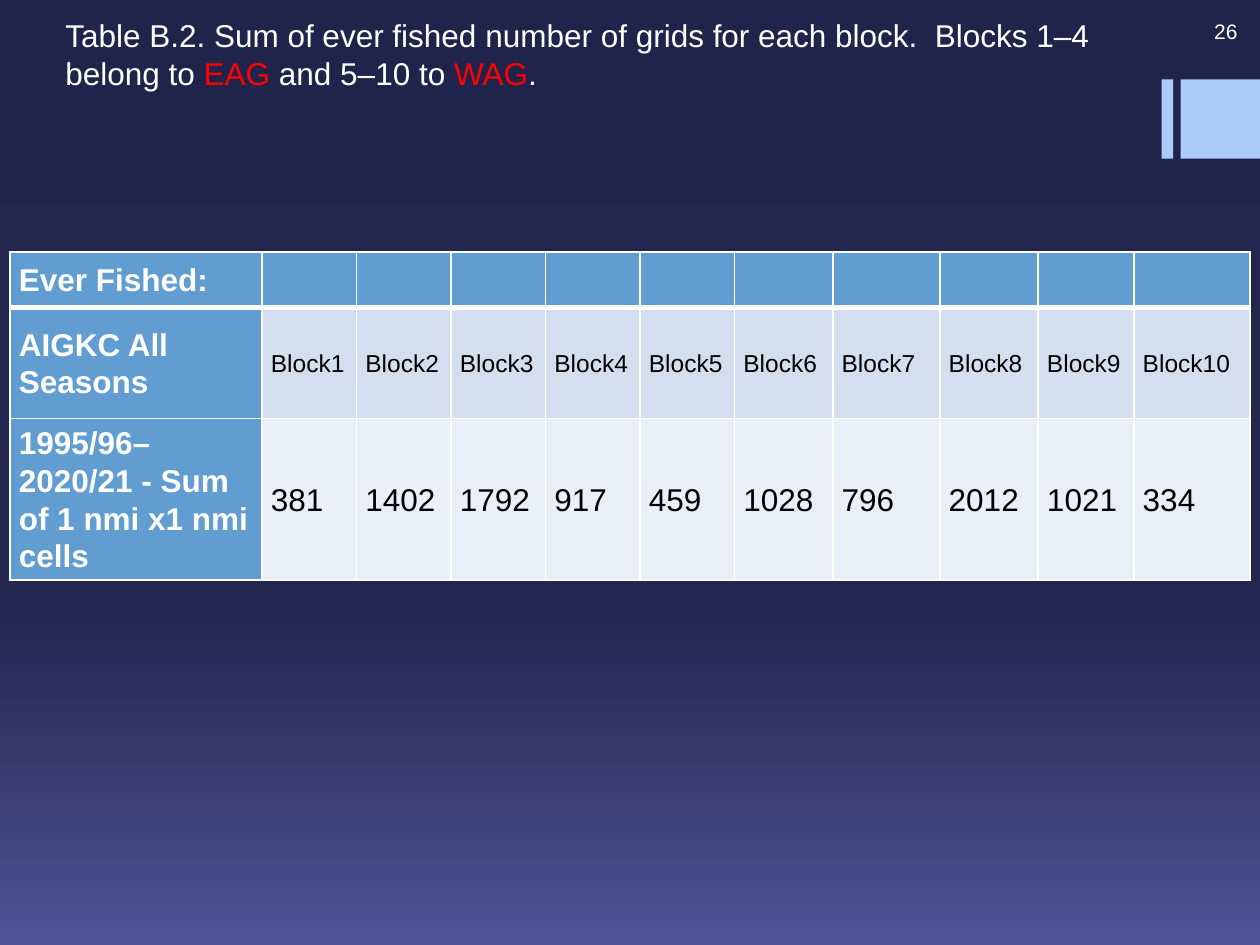
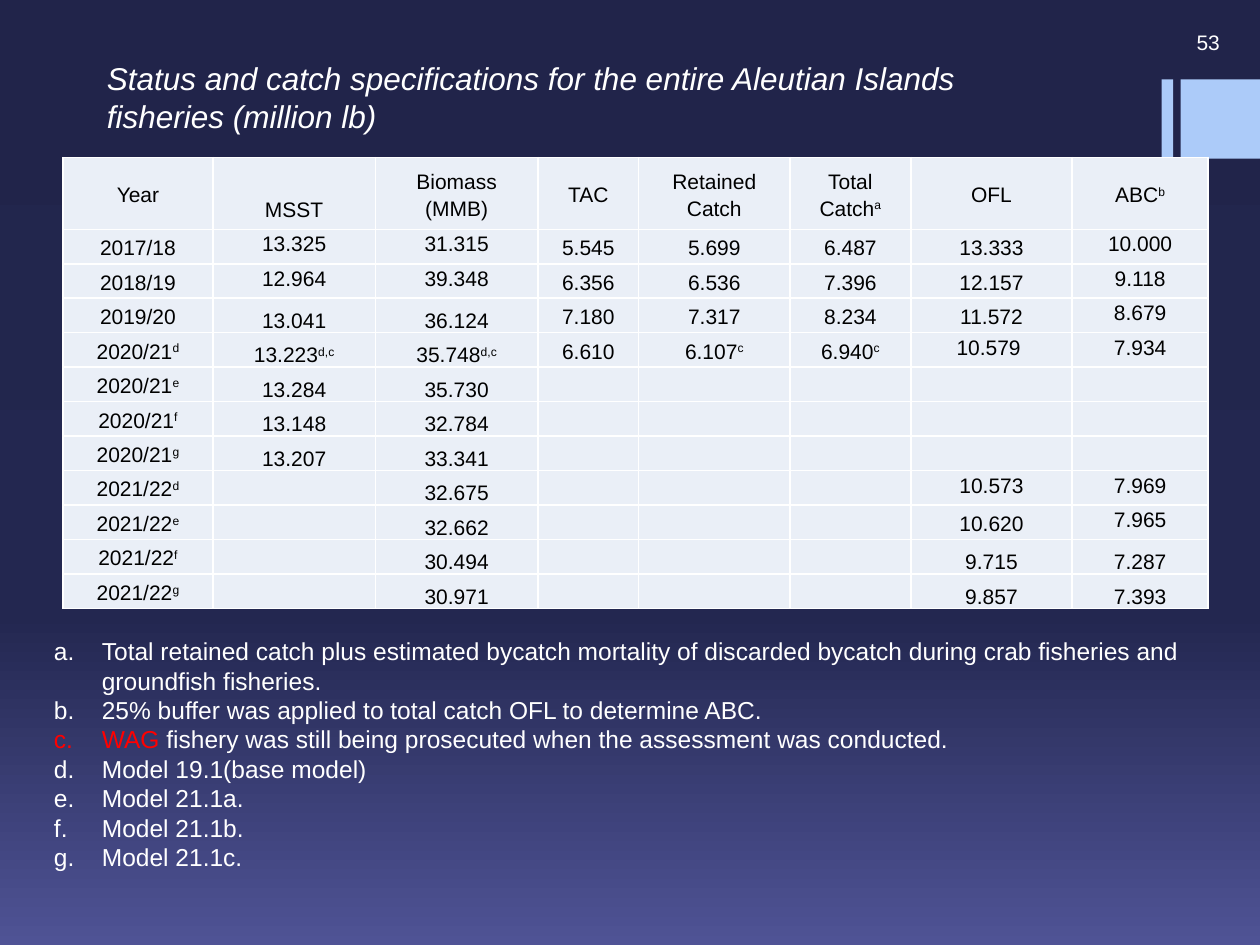
from copy import deepcopy

from lxml import etree
from pptx import Presentation
from pptx import util as u
from pptx.dml.color import RGBColor
from pptx.enum import shapes, text
from pptx.oxml.ns import qn

WHITE = RGBColor(0xFF, 0xFF, 0xFF)
BLACK = RGBColor(0, 0, 0)
RED = RGBColor(0xFF, 0, 0)
BAND_BLUE = RGBColor(0xAC, 0xCB, 0xF9)
HEADER_BLUE = RGBColor(0x62, 0x9D, 0xD1)
ROW_BLUE = RGBColor(0xD3, 0xDF, 0xEE)
ROW_PALE = RGBColor(0xEA, 0xEF, 0xF7)
BACKGROUND_STOPS = [
    (0, RGBColor(0x21, 0x24, 0x4A)),
    (0.65, RGBColor(0x23, 0x27, 0x50)),
    (1, RGBColor(0x4F, 0x53, 0x95)),
]
FONT = "Arial"
ANCHORS = {
    "t": text.MSO_ANCHOR.TOP,
    "m": text.MSO_ANCHOR.MIDDLE,
    "b": text.MSO_ANCHOR.BOTTOM,
}

BLOCK_COLUMNS = [2] + [0.75] * 5 + [0.78, 0.85, 0.78, 0.76, 0.92]
BLOCK_ROWS = [0.44, 0.88, 1.26]
BLOCK_CELLS = [
    ["Ever Fished:"] + [""] * 10,
    ["AIGKC All Seasons"] + [f"Block{number}" for number in range(1, 11)],
    ["1995/96–2020/21 - Sum of 1 nmi x1 nmi cells"]
    + "381 1402 1792 917 459 1028 796 2012 1021 334".split(),
]

CATCH_COLUMNS = [1.19, 1.29, 1.29, 0.8, 1.2, 0.96, 1.28, 1.08]
CATCH_HEADER_HEIGHT = 0.57
CATCH_TABLE_HEIGHT = 3.58
CATCH_CELLS = [
    ("mbmmmmmm", "Year|MSST|Biomass (MMB)|TAC|Retained Catch|Total Catch^a|OFL|ABC^b"),
    ("mttmmmmt", "2017/18|13.325|31.315|5.545|5.699|6.487|13.333|10.000"),
    ("mttmmmmt", "2018/19|12.964|39.348|6.356|6.536|7.396|12.157|9.118"),
    ("mbbmmmmt", "2019/20|13.041|36.124|7.180|7.317|8.234|11.572|8.679"),
    ("mbbmmmtt", "2020/21^d|13.223^d,c|35.748^d,c|6.610|6.107^c|6.940^c|10.579 |7.934"),
    ("mbbmmmmm", "2020/21^e|13.284|35.730|||||"),
    ("mbbmmmmm", "2020/21^f|13.148|32.784|||||"),
    ("mbbmmmmm", "2020/21^g|13.207|33.341|||||"),
    ("mmbmmmtt", "2021/22^d||32.675||||10.573|7.969"),
    ("mmbmmmmt", "2021/22^e||32.662||||10.620|7.965"),
    ("mmbmmmbb", "2021/22^f||30.494||||9.715|7.287"),
    ("mmbmmmbb", "2021/22^g||30.971||||9.857|7.393"),
]
NOTES = [
    [("Total retained catch plus estimated bycatch mortality of discarded bycatch "
      "during crab fisheries and groundfish fisheries.", WHITE)],
    [("25% buffer was applied to total catch OFL to determine ABC.", WHITE)],
    [("WAG", RED),
     (" fishery was still being prosecuted when the assessment was conducted.", WHITE)],
    [("Model 19.1(base model)", WHITE)],
    [("Model 21.1a.", WHITE)],
    [("Model 21.1b.", WHITE)],
    [("Model 21.1c.", WHITE)],
]


def set_background(master):
    """Give every slide the dark to violet vertical gradient."""
    fill = master.background.fill
    fill.gradient()
    fill.gradient_angle = 270
    stop_list = master.element.find(".//" + qn("a:gsLst"))
    stop_list.insert(1, deepcopy(stop_list[0]))
    for stop, (position, color) in zip(fill.gradient_stops, BACKGROUND_STOPS):
        stop.color.rgb = color
        stop.position = position


def add_run(paragraph, words, size, color, bold=False, italic=False, raised=False):
    """Append one formatted run, raised when it is a note mark."""
    run = paragraph.add_run()
    run.text = words
    font = run.font
    font.name, font.size, font.color.rgb = FONT, u.Pt(size), color
    font.bold, font.italic = bold, italic
    if raised:
        font._element.set("baseline", "30000")


def add_text_box(slide, left, top, width, height):
    """Add an empty wrapping text box and return its frame."""
    box = slide.shapes.add_textbox(*map(u.Inches, (left, top, width, height)))
    box.text_frame.word_wrap = True
    return box.text_frame


def add_band(slide, left, width):
    """Add one block of the band at the right edge."""
    band = slide.shapes.add_shape(
        shapes.MSO_SHAPE.RECTANGLE, *map(u.Inches, (left, 0.63, width, 0.63)))
    band.shadow.inherit = False
    band.fill.solid()
    band.fill.fore_color.rgb = BAND_BLUE
    band.line.fill.background()


def add_base_slide(presentation, number, left, top):
    """Add a slide with the edge band and its page number."""
    slide = presentation.slides.add_slide(presentation.slide_layouts[6])
    add_band(slide, 9.22, 0.09)
    add_band(slide, 9.37, 0.63)
    frame = add_text_box(slide, left, top, 1.03, 0.33)
    frame.vertical_anchor = text.MSO_ANCHOR.MIDDLE
    paragraph = frame.paragraphs[0]
    paragraph.alignment = text.PP_ALIGN.RIGHT
    add_run(paragraph, number, 12, WHITE)
    return slide


def add_title(slide, left, top, width, height, parts, italic=False):
    """Add the slide title from pairs of words and colour."""
    paragraph = add_text_box(slide, left, top, width, height).paragraphs[0]
    for words, color in parts:
        add_run(paragraph, words, 18, color, italic=italic)


def add_table(slide, left, top, columns, rows):
    """Add an unstyled table with the given column widths and row heights."""
    table = slide.shapes.add_table(
        len(rows), len(columns), u.Inches(left), u.Inches(top),
        u.Inches(sum(columns)), u.Inches(sum(rows))).table
    table.first_row = table.horz_banding = False
    for column, width in zip(table.columns, columns):
        column.width = u.Inches(width)
    for row, height in zip(table.rows, rows):
        row.height = u.Inches(height)
    return table


def set_borders(cell, top=1, bottom=1):
    """Draw white lines of the given point widths around a cell."""
    properties = cell._tc.get_or_add_tcPr()
    for side, width in (("L", 1), ("R", 1), ("T", top), ("B", bottom)):
        line = etree.SubElement(properties, qn(f"a:ln{side}"), w=str(u.Pt(width)))
        fill = etree.SubElement(line, qn("a:solidFill"))
        etree.SubElement(fill, qn("a:srgbClr"), val=str(WHITE))


def fill_cell(cell, words, fill, size, color, spacing, bold=False, anchor="m",
              alignment=text.PP_ALIGN.LEFT):
    """Fill one cell; words after a caret are raised as a note mark."""
    cell.fill.solid()
    cell.fill.fore_color.rgb = fill
    cell.margin_left = cell.margin_right = u.Inches(0.07)
    cell.margin_top = cell.margin_bottom = 0
    cell.vertical_anchor = ANCHORS[anchor]
    paragraph = cell.text_frame.paragraphs[0]
    paragraph.alignment, paragraph.line_spacing = alignment, spacing
    body, _, mark = words.partition("^")
    if body:
        add_run(paragraph, body, size, color, bold)
    else:
        etree.SubElement(paragraph._p, qn("a:endParaRPr"), sz=str(size * 100))
    if mark:
        add_run(paragraph, mark, size, color, bold, raised=True)


def add_block_table(slide):
    """Add the table of fished cells for each block."""
    table = add_table(slide, 0.08, 2, BLOCK_COLUMNS, BLOCK_ROWS)
    body_styles = [(HEADER_BLUE, 18), (ROW_BLUE, 14), (ROW_PALE, 18)]
    for row, (values, (row_fill, row_size)) in enumerate(zip(BLOCK_CELLS, body_styles)):
        for column, words in enumerate(values):
            cell = table.cell(row, column)
            set_borders(cell, 3 if row == 1 else 1, 3 if row == 0 else 1)
            if column == 0:
                fill_cell(cell, words, HEADER_BLUE, 18, WHITE, 1.07, bold=True)
            else:
                fill_cell(cell, words, row_fill, row_size, BLACK, 1.07)


def add_catch_table(slide):
    """Add the table of status and catch by year."""
    year_count = len(CATCH_CELLS) - 1
    year_height = (CATCH_TABLE_HEIGHT - CATCH_HEADER_HEIGHT) / year_count
    rows = [CATCH_HEADER_HEIGHT] + [year_height] * year_count
    table = add_table(slide, 0.5, 1.25, CATCH_COLUMNS, rows)
    for row, (anchors, line) in enumerate(CATCH_CELLS):
        for column, (anchor, words) in enumerate(zip(anchors, line.split("|"))):
            cell = table.cell(row, column)
            set_borders(cell)
            fill_cell(cell, words, ROW_PALE, 12, BLACK, 1.15, anchor=anchor,
                      alignment=text.PP_ALIGN.CENTER)
    table.cell(0, 1).margin_bottom = u.Inches(0.06)


def add_notes_list(slide):
    """Add the lettered list of table notes."""
    frame = add_text_box(slide, 0.33, 5, 9.45, 2.22)
    indent = u.Inches(0.38)
    for index, parts in enumerate(NOTES):
        paragraph = frame.add_paragraph() if index else frame.paragraphs[0]
        properties = paragraph._p.get_or_add_pPr()
        properties.set("marL", str(indent))
        properties.set("indent", str(-indent))
        etree.SubElement(properties, qn("a:buFont"), typeface="+mj-lt")
        etree.SubElement(properties, qn("a:buAutoNum"), type="alphaLcPeriod")
        for words, color in parts:
            add_run(paragraph, words, 14, color)


def main():
    """Build both slides and save the presentation."""
    presentation = Presentation()
    presentation.slide_width = u.Inches(10)
    presentation.slide_height = u.Inches(7.5)
    set_background(presentation.slide_master)

    slide = add_base_slide(presentation, "26", 8.89, 0.08)
    add_title(slide, 0.42, 0.08, 8.75, 1.01, [
        ("Table B.2. Sum of ever fished number of grids for each block.  "
         "Blocks 1–4 belong to ", WHITE),
        ("EAG", RED), (" and 5–10 to ", WHITE), ("WAG", RED), (".", WHITE)])
    add_block_table(slide)

    slide = add_base_slide(presentation, "53", 8.75, 0.17)
    add_title(slide, 0.75, 0.42, 7.75, 0.71, [
        ("Status and catch specifications for the entire Aleutian Islands "
         "fisheries (million lb)", WHITE)], italic=True)
    add_catch_table(slide)
    add_notes_list(slide)

    presentation.save("out.pptx")


if __name__ == "__main__":
    main()
